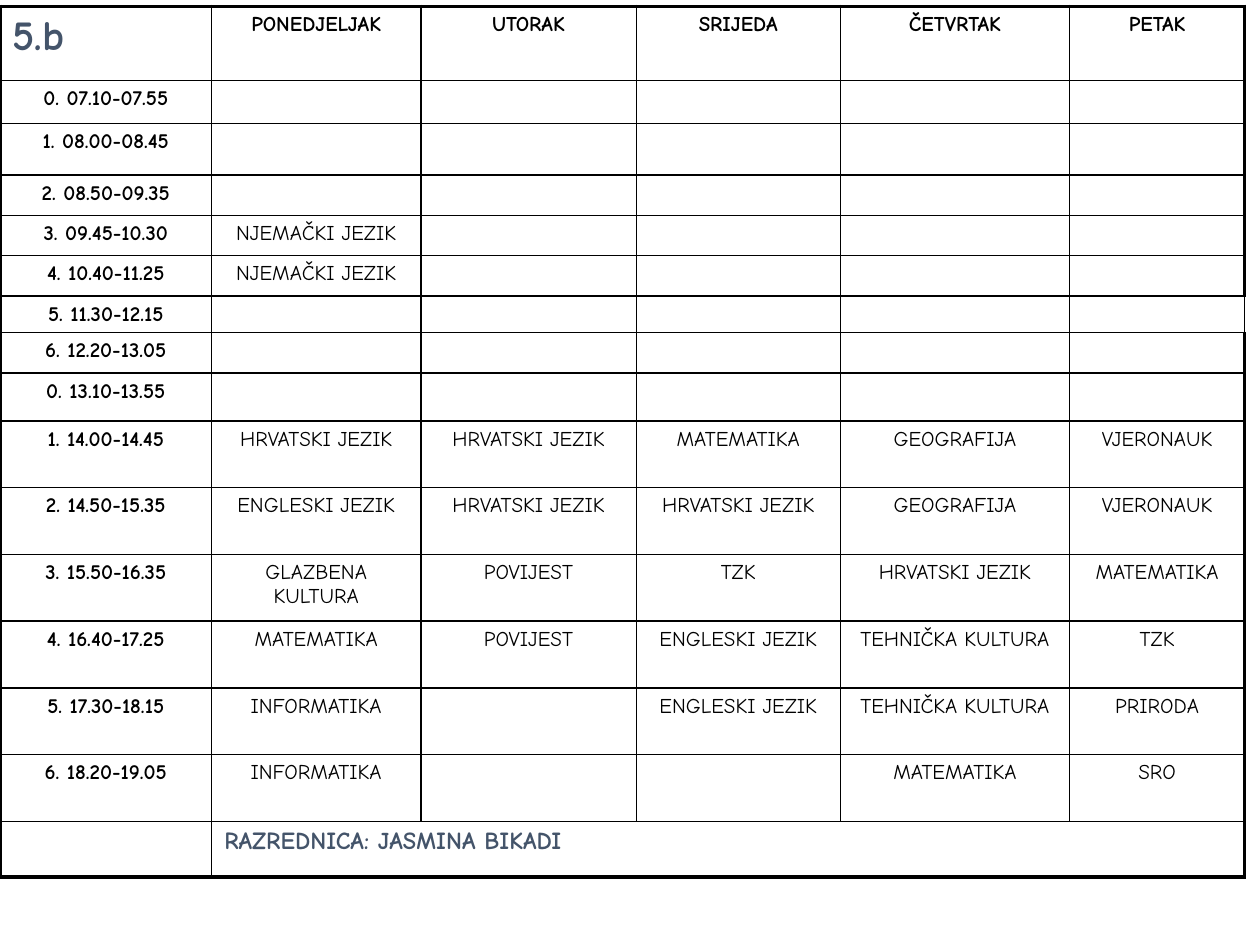
"""Build the weekly timetable slide of class 5.b."""
from lxml.etree import SubElement
from pptx import Presentation
from pptx.dml.color import RGBColor
from pptx.enum.text import PP_ALIGN
from pptx.oxml.ns import qn
from pptx.util import Inches, Pt

FONT = "Comic Neue"
BLACK, SLATE = "000000", "44546A"
THIN, THICK = 1, 2.25
COLUMN_WIDTHS = [1.68, 1.66, 1.71, 1.62, 1.82, 1.39]
ROW_HEIGHTS = [0.59, 0.34, 0.41, 0.32, 0.32, 0.32, 0.28, 0.32, 0.38] + [0.53] * 6 + [0.44]
TIMETABLE = [
    ["5.b", "PONEDJELJAK", "UTORAK", "SRIJEDA", "ČETVRTAK", "PETAK"],
    ["0. 07.10-07.55"],
    ["1. 08.00-08.45"],
    ["2. 08.50-09.35"],
    ["3. 09.45-10.30", "NJEMAČKI JEZIK"],
    ["4. 10.40-11.25", "NJEMAČKI JEZIK"],
    ["5. 11.30-12.15"],
    ["6. 12.20-13.05"],
    ["0. 13.10-13.55"],
    ["1. 14.00-14.45", "HRVATSKI JEZIK", "HRVATSKI JEZIK", "MATEMATIKA", "GEOGRAFIJA", "VJERONAUK"],
    ["2. 14.50-15.35", "ENGLESKI JEZIK", "HRVATSKI JEZIK", "HRVATSKI JEZIK", "GEOGRAFIJA", "VJERONAUK"],
    ["3. 15.50-16.35", "GLAZBENA KULTURA", "POVIJEST", "TZK", "HRVATSKI JEZIK", "MATEMATIKA"],
    ["4. 16.40-17.25", "MATEMATIKA", "POVIJEST", "ENGLESKI JEZIK", "TEHNIČKA KULTURA", "TZK"],
    ["5. 17.30-18.15", "INFORMATIKA", "", "ENGLESKI JEZIK", "TEHNIČKA KULTURA", "PRIRODA"],
    ["6. 18.20-19.05", "INFORMATIKA", "", "", "MATEMATIKA", "SRO"],
    ["", "RAZREDNICA: JASMINA BIKADI"],
]
LAST_ROW, LAST_COLUMN = len(ROW_HEIGHTS) - 1, len(COLUMN_WIDTHS) - 1
THIN_EDGE_ROW = 6
TEACHER_CELL = (LAST_ROW, 1)
ACCENT_SIZES = {(0, 0): 24, TEACHER_CELL: 14}


def set_borders(cell, widths):
    properties = cell._tc.get_or_add_tcPr()
    for side, width in zip("LRTB", widths):
        line = SubElement(properties, qn(f"a:ln{side}"), w=str(Pt(width)))
        fill = SubElement(line, qn("a:solidFill"))
        SubElement(fill, qn("a:srgbClr"), val=BLACK)


def style_text(para, size, bold, color):
    for span in para.runs:
        span.font.name = FONT
        span.font.size = Pt(size)
        span.font.bold = bold
        span.font.color.rgb = RGBColor.from_string(color)
    if not para.runs:
        ending = SubElement(para._p, qn("a:endParaRPr"), sz=str(size * 100))
        SubElement(ending, qn("a:latin"), typeface=FONT)


deck = Presentation()
deck.slide_width, deck.slide_height = Inches(10), Inches(7.5)
page = deck.slides.add_slide(deck.slide_layouts[6])
frame = page.shapes.add_table(
    len(ROW_HEIGHTS), len(COLUMN_WIDTHS), 0, Inches(0.05),
    Inches(sum(COLUMN_WIDTHS)), Inches(sum(ROW_HEIGHTS)))
table = frame.table
table.first_row = table.horz_banding = False
for column, width in zip(table.columns, COLUMN_WIDTHS):
    column.width = Inches(width)
for row, height in zip(table.rows, ROW_HEIGHTS):
    row.height = Inches(height)

for row_index, entries in enumerate(TIMETABLE):
    for column_index in range(len(COLUMN_WIDTHS)):
        cell = table.cell(row_index, column_index)
        position = (row_index, column_index)
        right_edge = column_index == LAST_COLUMN and row_index != THIN_EDGE_ROW
        edges = [column_index == 0, right_edge or position == TEACHER_CELL,
                 row_index == 0, row_index == LAST_ROW]
        set_borders(cell, [THICK if edge else THIN for edge in edges])
        cell.fill.background()
        para = cell.text_frame.paragraphs[0]
        if column_index < len(entries) and entries[column_index]:
            para.text = entries[column_index]
        accent = position in ACCENT_SIZES
        para.alignment = PP_ALIGN.LEFT if accent else PP_ALIGN.CENTER
        bold = accent or row_index == 0 or column_index == 0
        style_text(para, ACCENT_SIZES.get(position, 12), bold, SLATE if accent else BLACK)

table.cell(*TEACHER_CELL).merge(table.cell(LAST_ROW, LAST_COLUMN))
deck.save("out.pptx")
